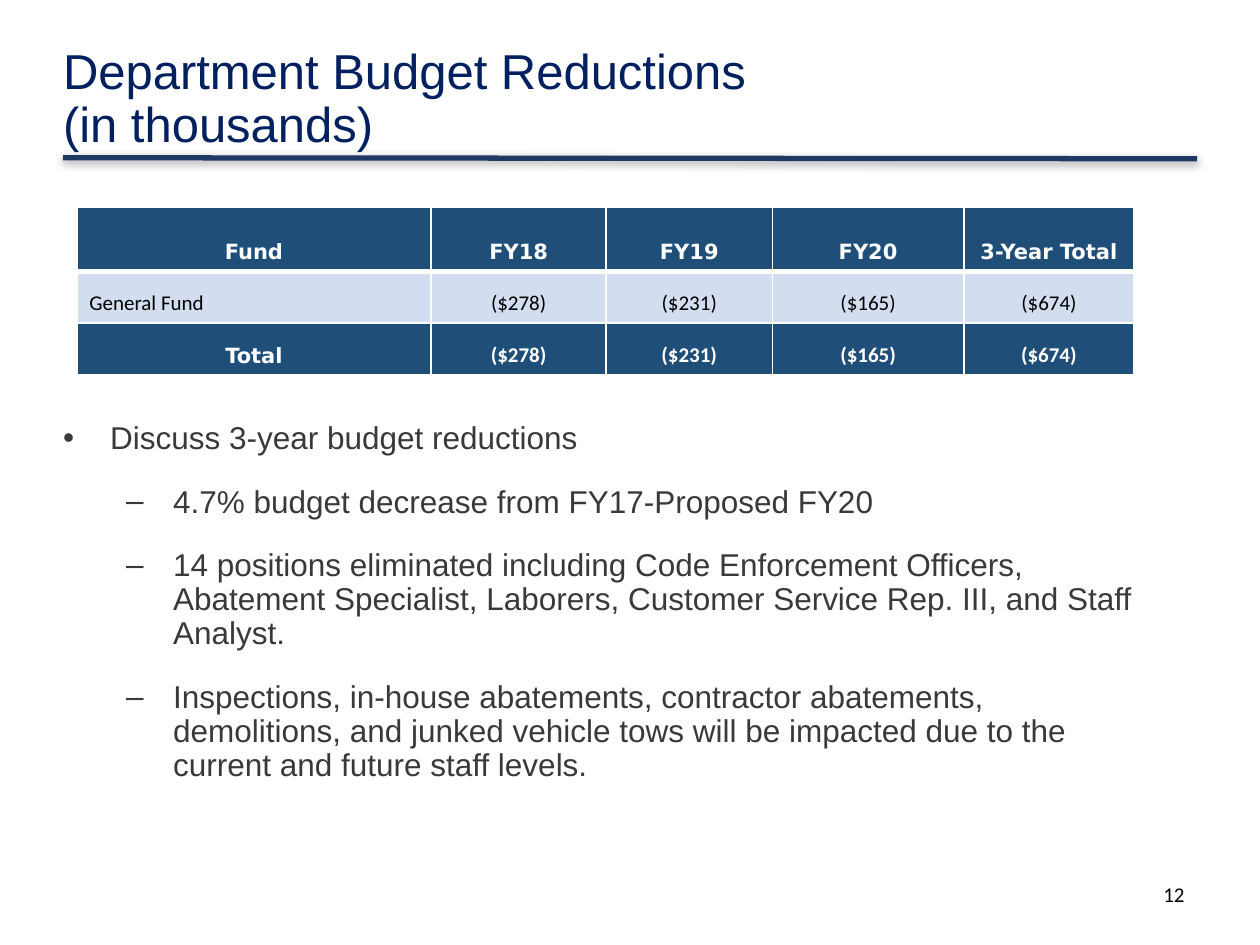
from lxml import etree
from pptx import Presentation
from pptx.dml.color import RGBColor
from pptx.enum import shapes, text
from pptx.oxml import ns
from pptx.util import Cm, Pt

NAVY, RULE, HEADER, BAND = "002060", "203864", "1F4E79", "D2DEEF"
WHITE, BLACK, BODY = "FFFFFF", "000000", "3B3838"

FUNDS = [
    ["Fund", "FY18", "FY19", "FY20", "3-Year Total"],
    ["General Fund", "($278)", "($231)", "($165)", "($674)"],
    ["Total", "($278)", "($231)", "($165)", "($674)"],
]
COLUMN_WIDTHS = [7.14, 3.53, 3.35, 3.86, 3.43]
ROW_HEIGHTS = [1.3, 1.04, 1.04]

POINTS = [
    (0, "Discuss 3-year budget reductions"),
    (1, "4.7% budget decrease from FY17-Proposed FY20"),
    (1, "14 positions eliminated including Code Enforcement Officers, "
        "Abatement Specialist, Laborers, Customer Service Rep. III, and Staff Analyst."),
    (1, "Inspections, in-house abatements, contractor abatements, demolitions, "
        "and junked vehicle tows will be impacted due to the current and future staff levels."),
]


def color(value):
    return RGBColor.from_string(value)


def set_all(target, values):
    for name, value in values.items():
        setattr(target, name, value)


def add_xml(parent, tag, **attributes):
    return etree.SubElement(parent, ns.qn(tag), attributes)


def format_runs(paragraph, size, name, rgb, bold=False):
    for run in paragraph.runs:
        set_all(run.font, {"size": Pt(size), "name": name, "bold": bold})
        run.font.color.rgb = color(rgb)


def place(placeholder, box, anchor):
    left, top, width, height = map(Cm, box)
    set_all(placeholder, {"left": left, "top": top, "width": width, "height": height})
    set_all(placeholder.text_frame, {
        "margin_left": 0, "margin_top": 0, "margin_right": 0, "margin_bottom": 0,
        "word_wrap": True, "auto_size": text.MSO_AUTO_SIZE.NONE,
        "vertical_anchor": anchor,
    })


def fill_title(heading, box):
    place(heading, box, text.MSO_ANCHOR.MIDDLE)
    heading.text_frame.text = "Department Budget Reductions\v(in thousands)"
    paragraph = heading.text_frame.paragraphs[0]
    set_all(paragraph, {"alignment": text.PP_ALIGN.LEFT, "line_spacing": 0.9})
    format_runs(paragraph, 28, "Arial", NAVY)


def add_title_rule(slide, left, top, width, drop):
    rule = slide.shapes.add_connector(
        shapes.MSO_CONNECTOR.STRAIGHT,
        Cm(left), Cm(top), Cm(left + width), Cm(top + drop))
    rule.line.width = Pt(3)
    rule.line.color.rgb = color(RULE)
    effects = add_xml(rule._element.spPr, "a:effectLst")
    shadow = add_xml(effects, "a:outerShdw", blurRad=str(Pt(5)), dist=str(Pt(1.6)),
                     dir="5400000", algn="t", rotWithShape="0")
    add_xml(add_xml(shadow, "a:srgbClr", val=BLACK), "a:alpha", val="38000")


def add_borders(cell, widths):
    """Draw white borders, given as a dict of side (L, R, T, B) to points."""
    properties = cell._tc.get_or_add_tcPr()
    for side, width in widths.items():
        border = add_xml(properties, f"a:ln{side}", w=str(Pt(width)))
        add_xml(add_xml(border, "a:solidFill"), "a:srgbClr", val=WHITE)


def add_fund_table(slide, left, top):
    table = slide.shapes.add_table(
        len(FUNDS), len(FUNDS[0]), Cm(left), Cm(top),
        Cm(sum(COLUMN_WIDTHS)), Cm(sum(ROW_HEIGHTS))).table
    set_all(table, {"first_row": False, "horz_banding": False})
    for column, width in zip(table.columns, COLUMN_WIDTHS):
        column.width = Cm(width)
    for row, height in zip(table.rows, ROW_HEIGHTS):
        row.height = Cm(height)

    for r, values in enumerate(FUNDS):
        is_fund = r == 1
        for c, value in enumerate(values):
            cell = table.cell(r, c)
            cell.text = value
            cell.vertical_anchor = text.MSO_ANCHOR.BOTTOM
            add_borders(cell, {"L": 1, "R": 1, "T": 3 if r == 1 else 1,
                               "B": 3 if r == 0 else 1})
            cell.fill.solid()
            cell.fill.fore_color.rgb = color(BAND if is_fund else HEADER)
            paragraph = cell.text_frame.paragraphs[0]
            paragraph.alignment = (text.PP_ALIGN.LEFT if is_fund and c == 0
                                   else text.PP_ALIGN.CENTER)
            is_label = r == 0 or (c == 0 and not is_fund)
            format_runs(paragraph, 12, "DejaVu Sans" if is_label else "Calibri",
                        BLACK if is_fund else WHITE, bold=not is_fund)


def fill_points(body, box):
    place(body, box, text.MSO_ANCHOR.TOP)
    frame = body.text_frame
    for i, (level, point) in enumerate(POINTS):
        paragraph = frame.add_paragraph() if i else frame.paragraphs[0]
        paragraph.text = point
        properties = paragraph._p.get_or_add_pPr()
        properties.set("marL", str(Cm(0.95 + 1.27 * level)))
        properties.set("indent", str(-Cm(0.95)))
        add_xml(properties, "a:buChar", char="•–"[level])
        set_all(paragraph, {"level": level, "line_spacing": 0.9,
                            "space_before": Pt(5 if i else 0), "space_after": Pt(12)})
        format_runs(paragraph, 18, "Arial", BODY)


def add_page_number(slide, box):
    number = slide.shapes.add_textbox(*map(Cm, box)).text_frame
    number.word_wrap = True
    number.text = "12"
    number.paragraphs[0].alignment = text.PP_ALIGN.RIGHT
    format_runs(number.paragraphs[0], 12, "Calibri", BLACK)


def main():
    deck = Presentation()
    set_all(deck, {"slide_width": Cm(25.4), "slide_height": Cm(19.05)})
    slide = deck.slides.add_slide(deck.slide_layouts[1])
    margin = 1.27
    add_title_rule(slide, margin, 3.18, 22.86, 0.02)
    fill_title(slide.shapes.title, (margin, 0.84, 17.42, 2.34))
    add_fund_table(slide, 1.55, 4.17)
    fill_points(slide.placeholders[1], (margin, 8.51, 21.97, 2.59))
    add_page_number(slide, (18.21, 17.65, 5.92, 1.02))
    deck.save("out.pptx")


if __name__ == "__main__":
    main()
